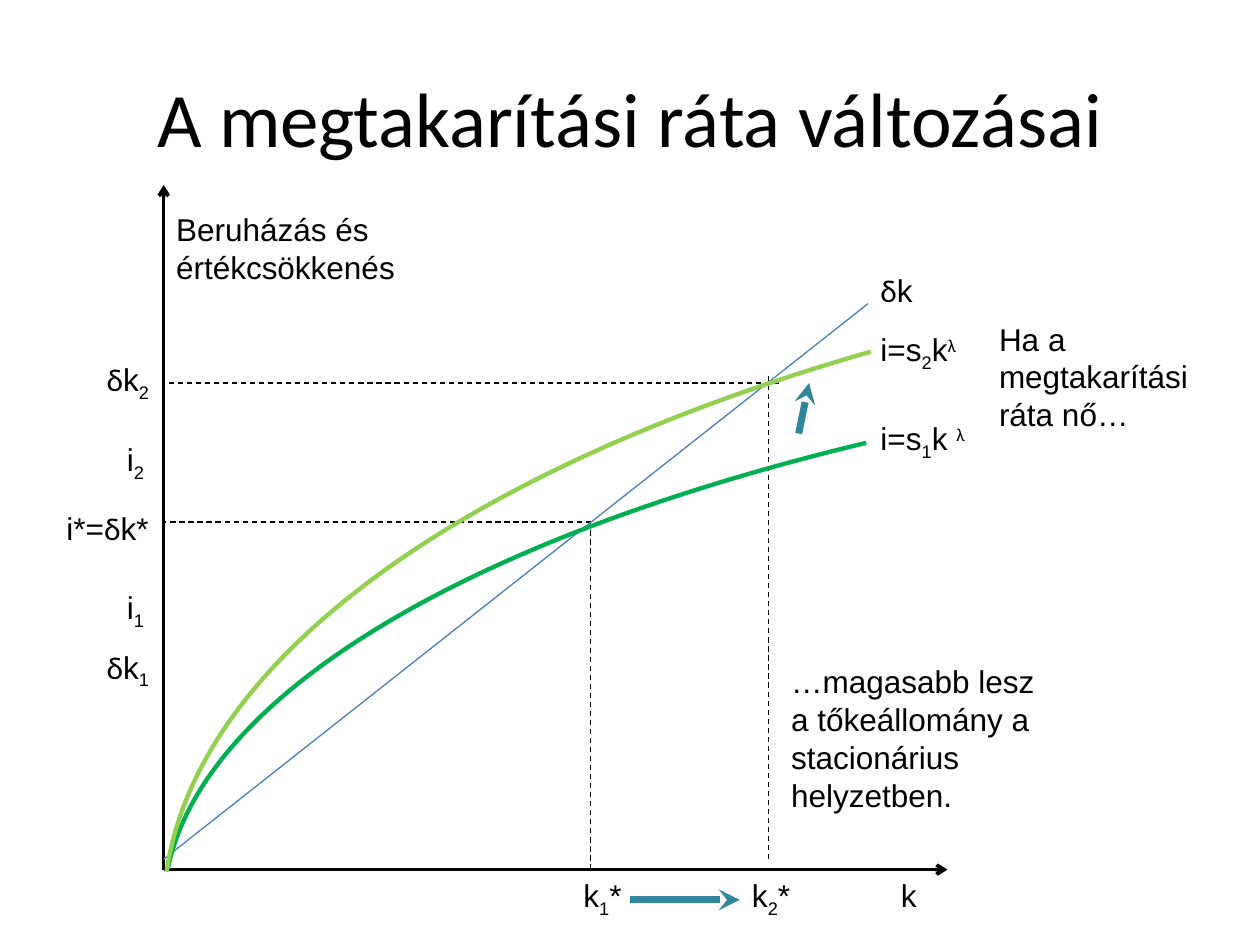
from pptx import Presentation
from pptx.dml.color import RGBColor
from pptx.enum.dml import MSO_LINE
from pptx.enum.shapes import MSO_CONNECTOR, MSO_SHAPE
from pptx.enum.text import MSO_ANCHOR, MSO_AUTO_SIZE, PP_ALIGN
from pptx.oxml.ns import qn
from pptx.util import Cm, Pt
from lxml import etree

prs = Presentation()
prs.slide_width, prs.slide_height = Cm(25.4), Cm(19.05)
s = prs.slides.add_slide(prs.slide_layouts[6])

SUB, SUP = -25000, 30000
X0, Y0 = 3.3, 17.53  # origin of the axes


def rgb(color):
    return RGBColor.from_string(color)


def add_text(runs, x, y, w=1.4, h=1.02, size=18, font="Arial", greek="Calibri",
             align=PP_ALIGN.LEFT, anchor=MSO_ANCHOR.TOP, grow=True):
    """Runs are (text, baseline) pairs; Greek letters have their own font."""
    tf = s.shapes.add_textbox(Cm(x), Cm(y), Cm(w), Cm(h)).text_frame
    tf.word_wrap = True
    tf.auto_size = MSO_AUTO_SIZE.SHAPE_TO_FIT_TEXT if grow else MSO_AUTO_SIZE.NONE
    tf.vertical_anchor = anchor
    p = tf.paragraphs[0]
    p.alignment = align
    for text, baseline in runs:
        r = p.add_run()
        r.text = text
        r.font.size = Pt(size)
        r.font.name = greek if text in "δλ" else font
        r.font.color.rgb = rgb("000000")
        if baseline:
            r.font._element.set("baseline", str(baseline))


# Title
add_text([("A megtakarítási ráta változásai", 0)], 1.27, 0.76, 22.86, 3.18,
         size=44, font="Calibri", align=PP_ALIGN.CENTER,
         anchor=MSO_ANCHOR.MIDDLE, grow=False)

# Axes, guides, depreciation line and shift arrows
lines = [
    (X0, Y0, X0, 3.73, "000000", 2, None, "arrow"),
    (X0, Y0, 19.1, Y0, "000000", 2, None, "arrow"),
    (11.91, Y0, 11.91, 10.52, "000000", 0.75, MSO_LINE.DASH, None),
    (11.91, 10.52, X0, 10.52, "000000", 0.75, MSO_LINE.DASH, None),
    (15.49, 17.32, 15.49, 7.52, "000000", 0.75, MSO_LINE.DASH, None),
    (15.7, 7.72, X0, 7.72, "000000", 0.75, MSO_LINE.DASH, None),
    (X0, 17.32, 17.5, 6.12, "4B7EBC", 0.75, None, None),
    (12.7, 18.14, 14.91, 18.14, "31859C", 4, None, "stealth"),
    (16.1, 8.74, 16.31, 7.72, "31859C", 4, None, "stealth"),
]
for x1, y1, x2, y2, color, width, dash, head in lines:
    sp = s.shapes.add_connector(MSO_CONNECTOR.STRAIGHT, Cm(x1), Cm(y1), Cm(x2), Cm(y2))
    sp.line.color.rgb = rgb(color)
    sp.line.width = Pt(width)
    if dash:
        sp.line.dash_style = dash
    if head:
        etree.SubElement(sp.line._get_or_add_ln(), qn("a:tailEnd"), type=head)
    etree.SubElement(sp._element.spPr, qn("a:effectLst"))

# Investment curves
for y, h, end, color in [(6.93, 22.81, 124.22, "00B050"),
                         (4.72, 27.36, 126.99, "92D050")]:
    sp = s.shapes.add_shape(MSO_SHAPE.ARC, Cm(X0), Cm(y), Cm(65.2), Cm(h))
    sp.adjustments[0], sp.adjustments[1] = 108.87, end
    sp.fill.background()
    sp.line.color.rgb = rgb(color)
    sp.line.width = Pt(2.5)
    sp.shadow.inherit = False

# Labels on the horizontal axis
add_text([("k", 0)], 17.91, Y0)
add_text([("k", 0), ("1", SUB), ("*", 0)], 11.51, Y0)
add_text([("k", 0), ("2", SUB), ("*", 0)], 14.91, Y0, 1.6)

# Labels on the vertical axis
for index, y_dep, y_inv in [("1", 12.93, 11.73), ("2", 7.14, 8.74)]:
    add_text([("δ", 0), ("k", 0), (index, SUB)], 1.9, y_dep)
    add_text([("i", 0), (index, SUB)], 2.31, y_inv)
add_text([("i*=", 0), ("δ", 0), ("k*", 0)], 1.09, 10.13, 3.3)

# Labels of the curves
add_text([("δ", 0), ("k", 0)], 17.5, 5.33)
for index, k, y in [("1", "k ", 8.33), ("2", "k", 6.53)]:
    add_text([("i=s", 0), (index, SUB), (k, 0), ("λ", SUP)], 17.5, y, 3.81)

# Explanations
add_text([("Beruházás és értékcsökkenés", 0)], X0, 4.11, 5, 1.8)
add_text([("Ha a megtakarítási ráta nő…", 0)], 19.89, 6.32, 4.6, 2.57)
add_text([("…magasabb lesz a tőkeállomány a stacionárius helyzetben.", 0)],
         15.7, 13.23, 5.41, 4.11)

prs.save("out.pptx")
